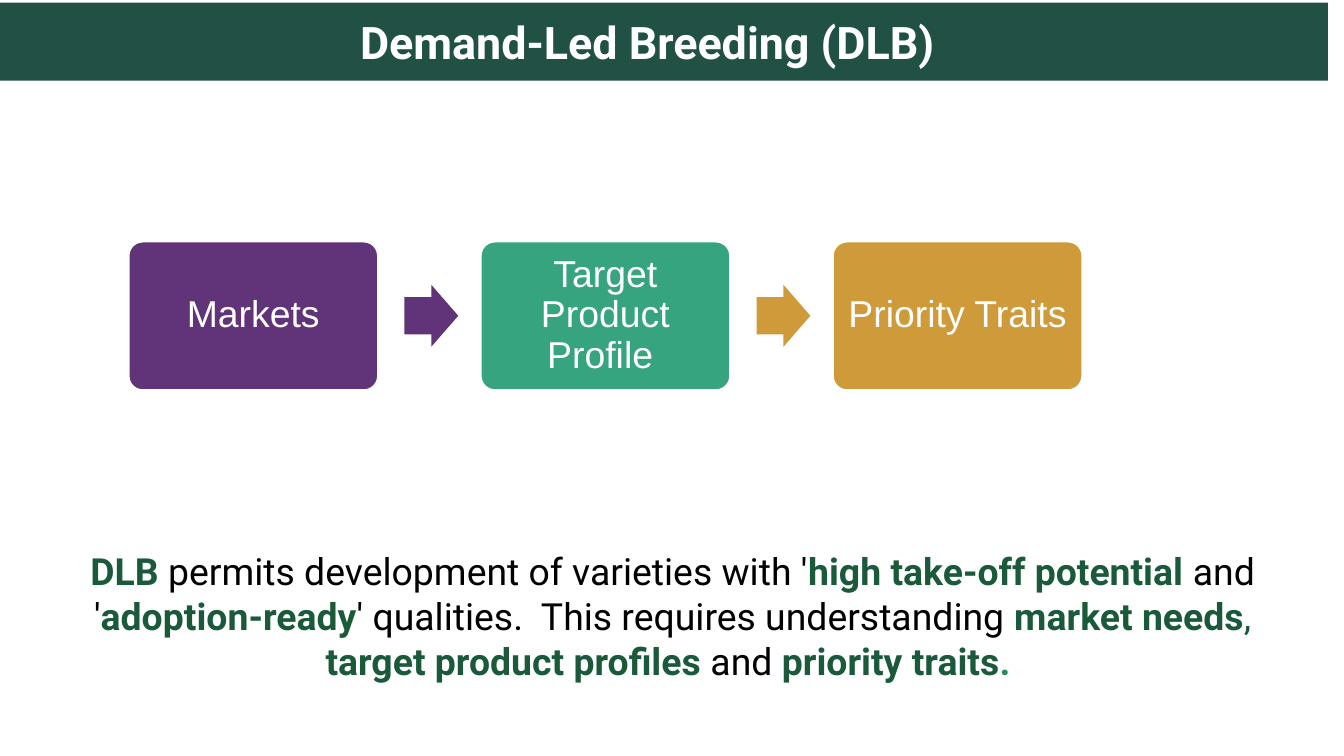
from dataclasses import dataclass

from pptx import Presentation
from pptx.dml.color import RGBColor
from pptx.enum.shapes import MSO_SHAPE
from pptx.enum.text import MSO_ANCHOR, MSO_AUTO_SIZE, PP_ALIGN
from pptx.util import Inches, Pt

RECTANGLE = MSO_SHAPE.RECTANGLE
ROUNDED = MSO_SHAPE.ROUNDED_RECTANGLE
ARROW = MSO_SHAPE.RIGHT_ARROW
MIDDLE = MSO_ANCHOR.MIDDLE
CENTER = PP_ALIGN.CENTER
GROW = MSO_AUTO_SIZE.SHAPE_TO_FIT_TEXT

COLORS = {
    "white": "FFFFFF",
    "black": "000000",
    "banner": "215145",
    "purple": "613378",
    "teal": "36A47E",
    "gold": "CF9A3A",
    "green": "1A5A3B",
    "light green": "298B5C",
}

PAGE_WIDTH = 10
PAGE_HEIGHT = PAGE_WIDTH * 9 / 16
STEP_LEFT = 0.95
STEP_PITCH = 2.62
ARROW_OFFSET = 2.06


@dataclass
class Area:
    left: float
    top: float
    width: float
    height: float

    def lengths(self) -> list:
        return [Inches(value) for value in (self.left, self.top, self.width, self.height)]


@dataclass
class Span:
    text: str
    color: str = "white"
    bold: bool = False
    font: str = "Roboto"
    size: int = 20


@dataclass
class Step:
    text: str
    color: str
    arrow_color: str = ""


STEPS = [
    Step("Markets", "purple", "purple"),
    Step("Target Product Profile ", "teal", "gold"),
    Step("Priority Traits ", "gold"),
]

SUMMARY = [
    Span("DLB", "green", True),
    Span(" permits development of varieties with '", "black"),
    Span("high take-off potential ", "green", True),
    Span("and '", "black"),
    Span("adoption-ready", "green", True),
    Span("' qualities.  This requires understanding ", "black"),
    Span("market needs", "green", True),
    Span(", ", "green"),
    Span("target product profiles", "green", True),
    Span(" and ", "black"),
    Span("priority traits", "green", True),
    Span(". ", "light green", True),
]


def rgb(name: str) -> RGBColor:
    return RGBColor.from_string(COLORS[name])


def write_text(box, spans: list[Span], line_spacing: float = 1.0, **frame_format) -> None:
    frame = box.text_frame
    for name, value in {"word_wrap": True, **frame_format}.items():
        setattr(frame, name, value)
    para = frame.paragraphs[0]
    para.alignment = CENTER
    para.line_spacing = line_spacing
    for span in spans:
        run = para.add_run()
        run.text = span.text
        font_format = {"name": span.font, "size": Pt(span.size), "bold": span.bold}
        for name, value in font_format.items():
            setattr(run.font, name, value)
        run.font.color.rgb = rgb(span.color)


def draw_shape(page, kind, area: Area, color: str, adjustments: tuple = ()):
    shape = page.shapes.add_shape(kind, *area.lengths())
    shape.shadow.inherit = False
    shape.fill.solid()
    shape.fill.fore_color.rgb = rgb(color)
    shape.line.fill.background()
    for index, value in enumerate(adjustments):
        shape.adjustments[index] = value
    return shape


def draw_step(page, step: Step, left: float) -> None:
    box = draw_shape(page, ROUNDED, Area(left, 1.79, 1.87, 1.12), step.color, (0.1,))
    box.line.color.rgb = rgb("white")
    box.line.width = Pt(2)
    margins = dict.fromkeys(
        ("margin_left", "margin_top", "margin_right", "margin_bottom"), Inches(0.08)
    )
    write_text(box, [Span(step.text, font="Arial")], 0.9, vertical_anchor=MIDDLE, **margins)
    if step.arrow_color:
        arrow_area = Area(left + ARROW_OFFSET, 2.12, 0.4, 0.46)
        draw_shape(page, ARROW, arrow_area, step.arrow_color, (0.6, 0.5))


def main() -> None:
    deck = Presentation()
    deck.slide_width = Inches(PAGE_WIDTH)
    deck.slide_height = Inches(PAGE_HEIGHT)
    page = deck.slides.add_slide(deck.slide_layouts[6])

    banner = draw_shape(page, RECTANGLE, Area(0, 0.02, 9.88, 0.58), "banner")
    title = Span("Demand-Led Breeding (DLB)   ", bold=True, size=24)
    write_text(banner, [title], vertical_anchor=MIDDLE)

    for index, step in enumerate(STEPS):
        draw_step(page, step, STEP_LEFT + index * STEP_PITCH)

    summary = page.shapes.add_textbox(*Area(0.28, 4.03, 9.45, 1.35).lengths())
    write_text(summary, SUMMARY, auto_size=GROW)

    deck.save("out.pptx")


if __name__ == "__main__":
    main()
